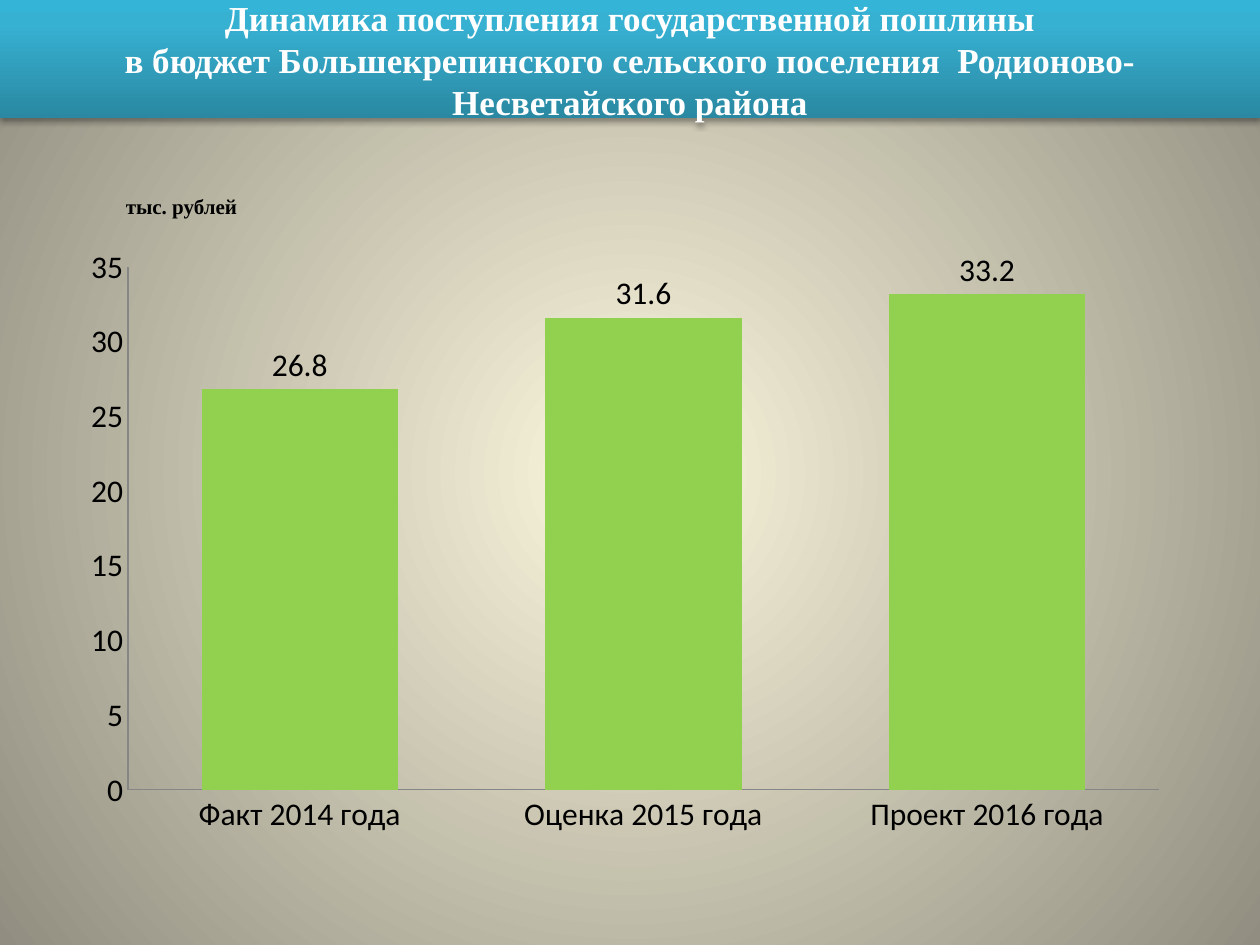
from typing import NamedTuple

from lxml.etree import SubElement
from pptx import Presentation
from pptx.chart.data import CategoryChartData
from pptx.dml.color import RGBColor
from pptx.enum.chart import XL_CHART_TYPE, XL_LABEL_POSITION, XL_TICK_MARK
from pptx.enum.shapes import MSO_SHAPE
from pptx.enum.text import MSO_ANCHOR, PP_ALIGN
from pptx.oxml import parse_xml
from pptx.oxml.ns import nsdecls, qn
from pptx.util import Emu, Pt

PX = 914400 // 126
BLACK = RGBColor(0, 0, 0)
WHITE = RGBColor(0xFF, 0xFF, 0xFF)
GREEN = RGBColor(0x92, 0xD0, 0x50)
AXIS_GREY = RGBColor(0x86, 0x86, 0x86)
CREAM = RGBColor(0xFC, 0xF7, 0xDD)
STONE = RGBColor(0x91, 0x8E, 0x81)
TEAL_DARK = RGBColor(0x2A, 0x88, 0xA2)
TEAL = RGBColor(0x37, 0xB1, 0xD2)
TEAL_LIGHT = RGBColor(0x34, 0xB4, 0xD6)

RADIAL = ('<a:path path="circle"><a:fillToRect l="50000" t="50000" '
          'r="50000" b="50000"/></a:path>')
UPWARD = '<a:lin ang="16200000" scaled="0"/>'


class Box(NamedTuple):
    x: int
    y: int
    w: int
    h: int

    def emu(self) -> list[Emu]:
        return [Emu(v * PX) for v in self]


class Stop(NamedTuple):
    percent: int
    color: RGBColor


class Bar(NamedTuple):
    category: str
    value: float


HEADER = Box(0, 0, 1260, 118)
UNIT = Box(88, 187, 187, 38)
CHART = Box(69, 236, 1113, 610)
PLOT = Box(128, 267, 1031, 523)
BARS = [Bar("Факт 2014 года", 26.8),
        Bar("Оценка 2015 года", 31.6),
        Bar("Проект 2016 года", 33.2)]


def make_gradient(owner, stops: list[Stop], direction: str) -> None:
    """Swap the solid fill inside an XML element for a gradient."""
    gs = "".join(f'<a:gs pos="{stop.percent * 1000}">'
                 f'<a:srgbClr val="{stop.color}"/></a:gs>' for stop in stops)
    solid = owner.find(".//" + qn("a:solidFill"))
    solid.getparent().replace(solid, parse_xml(
        f'<a:gradFill {nsdecls("a")} rotWithShape="1">'
        f'<a:gsLst>{gs}</a:gsLst>{direction}</a:gradFill>'))


def add_shadow(sp) -> None:
    sp._element.spPr.append(parse_xml(
        f'<a:effectLst {nsdecls("a")}><a:outerShdw blurRad="{Pt(3.1)}" '
        f'dist="{Pt(1.8)}" dir="5400000" rotWithShape="0">'
        f'<a:srgbClr val="{BLACK}"><a:alpha val="35000"/></a:srgbClr>'
        '</a:outerShdw></a:effectLst>'))


def write(tf, *lines: str, size: int, color: RGBColor,
          font: str = "Times New Roman", bold: bool = True) -> None:
    tf.word_wrap = True
    for i, line in enumerate(lines):
        p = tf.add_paragraph() if i else tf.paragraphs[0]
        p.alignment = PP_ALIGN.CENTER
        r = p.add_run()
        r.text = line
        r.font.name, r.font.size = font, Pt(size)
        r.font.bold, r.font.color.rgb = bold, color


def add_header(s) -> None:
    sp = s.shapes.add_shape(MSO_SHAPE.RECTANGLE, *HEADER.emu())
    sp.fill.solid()
    sp.line.fill.background()
    make_gradient(sp._element.spPr, [Stop(0, TEAL_DARK), Stop(80, TEAL),
                                     Stop(100, TEAL_LIGHT)], UPWARD)
    add_shadow(sp)
    tf = sp.text_frame
    tf.vertical_anchor = MSO_ANCHOR.MIDDLE
    write(tf, "Динамика поступления государственной пошлины",
          "в бюджет Большекрепинского сельского поселения  "
          "Родионово-Несветайского района", size=20, color=WHITE)


def set_plot_area(chart) -> None:
    """Pin the inner plot area to PLOT."""
    area = chart._chartSpace.chart.plotArea
    layout = area.find(qn("c:layout"))
    if layout is None:
        layout = parse_xml(f'<c:layout {nsdecls("c")}/>')
        area.insert(0, layout)
    manual = SubElement(layout, qn("c:manualLayout"))
    values = {"layoutTarget": "inner", "xMode": "edge", "yMode": "edge",
              "x": (PLOT.x - CHART.x) / CHART.w,
              "y": (PLOT.y - CHART.y) / CHART.h,
              "w": PLOT.w / CHART.w, "h": PLOT.h / CHART.h}
    for name, value in values.items():
        SubElement(manual, qn(f"c:{name}")).set("val", str(value))


def add_duty_chart(s) -> None:
    data = CategoryChartData()
    data.categories = [bar.category for bar in BARS]
    data.add_series("Series 1", [bar.value for bar in BARS])
    chart = s.shapes.add_chart(XL_CHART_TYPE.COLUMN_CLUSTERED,
                               *CHART.emu(), data).chart
    chart.has_legend = chart.has_title = False
    chart.font.name, chart.font.size = "Calibri", Pt(18)
    chart.font.color.rgb = BLACK
    for axis in (chart.category_axis, chart.value_axis):
        axis.major_tick_mark = axis.minor_tick_mark = XL_TICK_MARK.NONE
        axis.has_major_gridlines = False
        axis.format.line.color.rgb = AXIS_GREY
    axis = chart.value_axis
    axis.minimum_scale, axis.maximum_scale, axis.major_unit = 0, 35, 5
    plot = chart.plots[0]
    plot.gap_width, plot.vary_by_categories = 75, False
    plot.has_data_labels = True
    plot.data_labels.show_value = True
    plot.data_labels.position = XL_LABEL_POSITION.OUTSIDE_END
    fill = plot.series[0].format.fill
    fill.solid()
    fill.fore_color.rgb = GREEN
    set_plot_area(chart)


def main() -> None:
    prs = Presentation()
    prs.slide_width, prs.slide_height = Emu(1260 * PX), Emu(945 * PX)
    s = prs.slides.add_slide(prs.slide_layouts[6])
    s.background.fill.solid()
    make_gradient(s._element.cSld, [Stop(0, CREAM), Stop(100, STONE)], RADIAL)
    add_header(s)
    add_duty_chart(s)
    tf = s.shapes.add_textbox(*UNIT.emu()).text_frame
    write(tf, "тыс. рублей", size=12, color=BLACK)
    prs.save("out.pptx")


if __name__ == "__main__":
    main()
